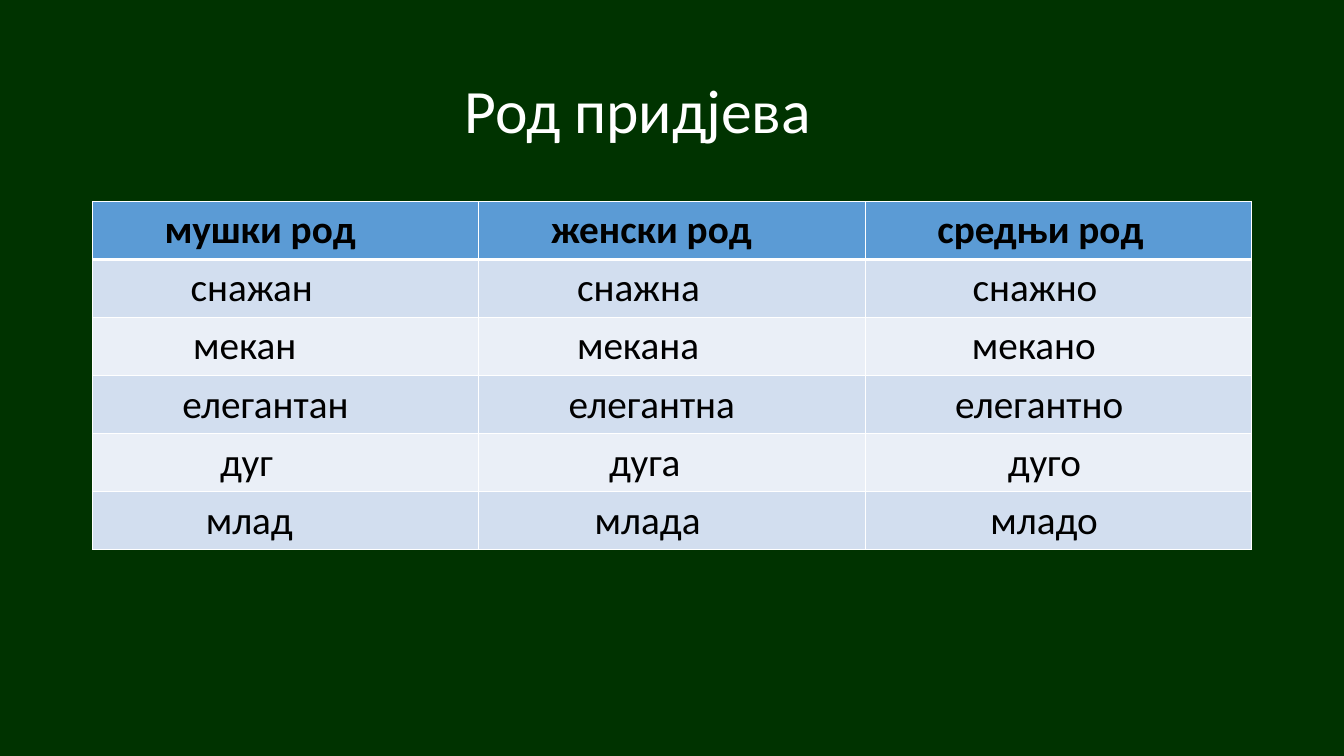
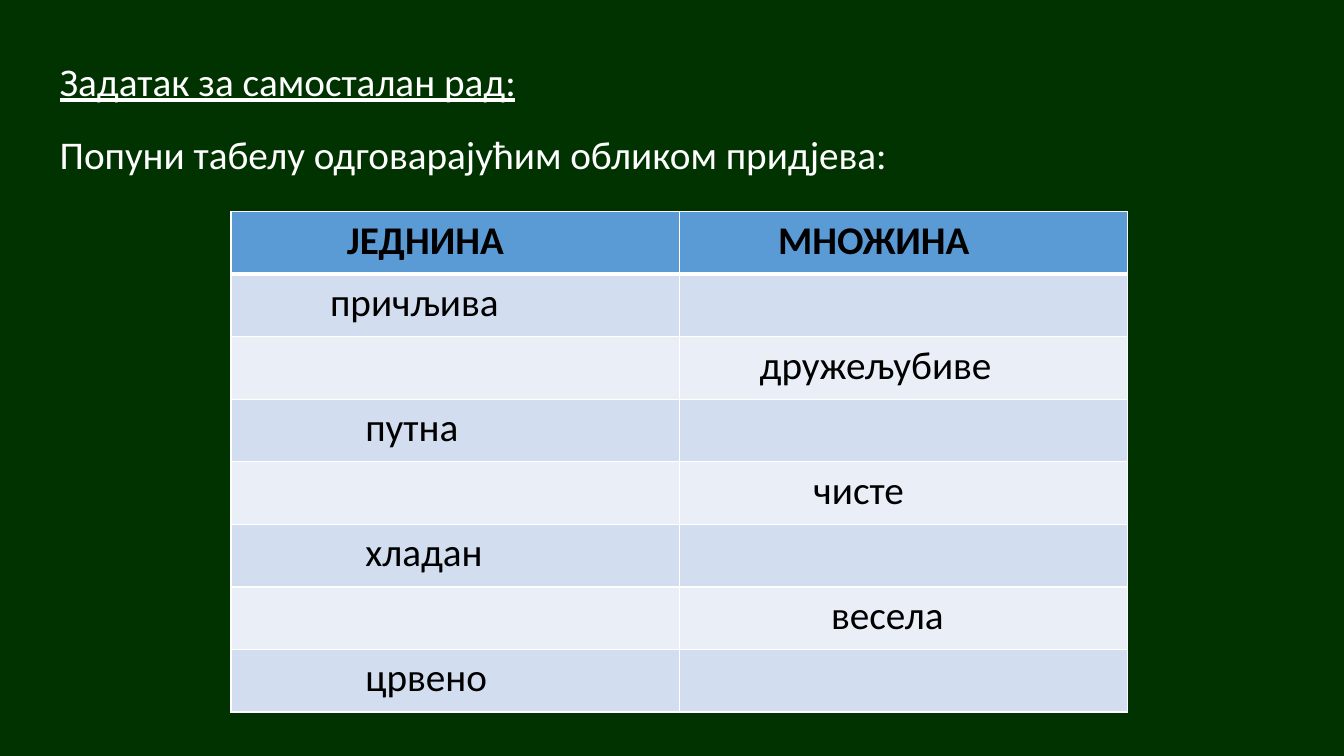
"""Builds two slides about the gender and number of adjectives."""
from dataclasses import dataclass

from lxml import etree
from pptx import Presentation
from pptx.dml.color import RGBColor
from pptx.enum.text import MSO_ANCHOR, MSO_AUTO_SIZE, PP_ALIGN
from pptx.oxml.ns import qn
from pptx.util import Inches, Pt

LEFT = PP_ALIGN.LEFT
TOP = MSO_ANCHOR.TOP
MIDDLE = MSO_ANCHOR.MIDDLE
NO_FIT = MSO_AUTO_SIZE.NONE
CONTENT_LAYOUT = 1
TITLE_LAYOUT = 5

GENDER_ROWS = [
    [("мушки род", 0.86), ("женски род", 0.86), ("средњи род", 0.86)],
    [("снажан", 1.17), ("снажна", 1.17), ("снажно", 1.28)],
    [("мекан", 1.2), ("мекана", 1.17), ("мекано", 1.27)],
    [("елегантан", 1.07), ("елегантна", 1.07), ("елегантно", 1.07)],
    [("дуг", 1.52), ("дуга", 1.55), ("дуго", 1.7)],
    [("млад", 1.35), ("млада", 1.38), ("младо", 1.49)],
]
NUMBER_ROWS = [
    [("ЈЕДНИНА", 1.38), ("МНОЖИНА", 1.18)],
    [("причљива", 1.18), None],
    [None, ("дружељубиве", 0.96)],
    [("путна", 1.6), None],
    [None, ("чисте", 1.6)],
    [("хладан", 1.6), None],
    [None, ("весела", 1.81)],
    [("црвено", 1.6), None],
]


@dataclass(frozen=True)
class Theme:
    """Colours, type sizes and line widths of the presentation."""
    background: str = "003300"
    light: str = "FFFFFF"
    dark: str = "000000"
    header: str = "5B9BD5"
    bands: tuple = ("D2DEEF", "EAEFF7")
    font: str = "Calibri"
    title_size: int = 44
    text_size: int = 28
    thin: int = 1
    thick: int = 3


class Deck:
    """Holds the style and the current slide on a grid of 16 columns by 9 rows."""

    def __init__(self, theme):
        """Starts a wide presentation with a plain background."""
        self.theme = theme
        self.presentation = Presentation()
        self.presentation.slide_width = Inches(13.33)
        self.presentation.slide_height = Inches(7.5)
        self.column = self.presentation.slide_width / 16
        self.row = self.presentation.slide_height / 9
        self.slide = None
        self.paint(self.presentation.slide_master.background.fill, theme.background)

    def columns(self, count):
        """Returns the length of a number of grid columns."""
        return round(count * self.column)

    def box(self, left, top, width, height):
        """Returns a grid box as slide lengths."""
        return (self.columns(left), round(top * self.row),
                self.columns(width), round(height * self.row))

    def paint(self, fill, color):
        """Gives a fill one solid colour."""
        fill.solid()
        fill.fore_color.rgb = RGBColor.from_string(color)

    def add_slide(self, layout):
        """Adds a slide and makes it the current one."""
        layouts = self.presentation.slide_layouts
        self.slide = self.presentation.slides.add_slide(layouts[layout])

    def set_text(self, paragraph, text, color, **formats):
        """Puts text into a paragraph and formats its font."""
        paragraph.text = text
        paragraph.alignment = LEFT
        values = {"name": self.theme.font, "size": Pt(self.theme.text_size),
                  "bold": False, **formats}
        for name, value in values.items():
            setattr(paragraph.font, name, value)
        paragraph.font.color.rgb = RGBColor.from_string(color)

    def place(self, shape, box, text, anchor=TOP, spacing=0.9, **formats):
        """Moves a placeholder, fills in its text and returns its paragraph."""
        for name, value in zip(("left", "top", "width", "height"), self.box(*box)):
            setattr(shape, name, value)
        frame = shape.text_frame
        values = {"word_wrap": True, "auto_size": NO_FIT, "vertical_anchor": anchor}
        for name, value in values.items():
            setattr(frame, name, value)
        paragraph = frame.paragraphs[0]
        paragraph.line_spacing = spacing
        paragraph.space_before = Pt(0)
        if shape != self.slide.shapes.title:
            self.remove_bullet(paragraph)
        self.set_text(paragraph, text, self.theme.light, **formats)

    def remove_bullet(self, paragraph):
        """Takes the bullet and its hanging indent from a paragraph."""
        properties = paragraph._p.get_or_add_pPr()
        properties.set("marL", "0")
        properties.set("indent", "0")
        etree.SubElement(properties, qn("a:buNone"))

    def title(self, box, text, indent=0.12, **formats):
        """Places the title of the slide."""
        shape = self.slide.shapes.title
        self.place(shape, box, text, **formats)
        shape.text_frame.margin_left = self.columns(indent)

    def body(self, box, text):
        """Places the body text without a bullet."""
        self.place(self.slide.placeholders[1], box, text)

    def borders(self, cell, row_index):
        """Draws the cell borders, with a thick line under the header."""
        theme = self.theme
        widths = {
            "lnL": theme.thin,
            "lnR": theme.thin,
            "lnT": theme.thick if row_index == 1 else theme.thin,
            "lnB": theme.thick if row_index == 0 else theme.thin,
        }
        properties = cell._tc.get_or_add_tcPr()
        for side, width in widths.items():
            line = etree.SubElement(properties, qn(f"a:{side}"), w=str(int(Pt(width))))
            fill = etree.SubElement(line, qn("a:solidFill"))
            etree.SubElement(fill, qn("a:srgbClr"), val=theme.light)

    def table(self, box, rows):
        """Adds a banded table whose texts carry their own indents."""
        theme = self.theme
        table = self.slide.shapes.add_table(len(rows), len(rows[0]), *self.box(*box)).table
        for row_index, entries in enumerate(rows):
            header = row_index == 0
            color = theme.header if header else theme.bands[(row_index - 1) % 2]
            for column_index, entry in enumerate(entries):
                cell = table.cell(row_index, column_index)
                self.borders(cell, row_index)
                self.paint(cell.fill, color)
                if entry:
                    text, indent = entry
                    cell.margin_left = self.columns(indent)
                    self.set_text(cell.text_frame.paragraphs[0], text, theme.dark, bold=header)


def main():
    """Builds and saves the presentation."""
    deck = Deck(Theme())

    deck.add_slide(TITLE_LAYOUT)
    deck.title((1.1, 0.48, 13.8, 1.74), "Род придјева", indent=4.43,
               anchor=MIDDLE, size=Pt(deck.theme.title_size))
    deck.table((1.1, 2.4, 13.8, 4.14), GENDER_ROWS)

    deck.add_slide(CONTENT_LAYOUT)
    deck.title((0.59, 0.62, 14.3, 0.68), "Задатак за самосталан рад:",
               spacing=1.0, underline=True)
    deck.body((0.59, 1.56, 13.8, 7.3), "Попуни табелу одговарајућим обликом придјева:")
    deck.table((2.75, 2.52, 10.67, 5.96), NUMBER_ROWS)

    deck.presentation.save("out.pptx")


if __name__ == "__main__":
    main()
